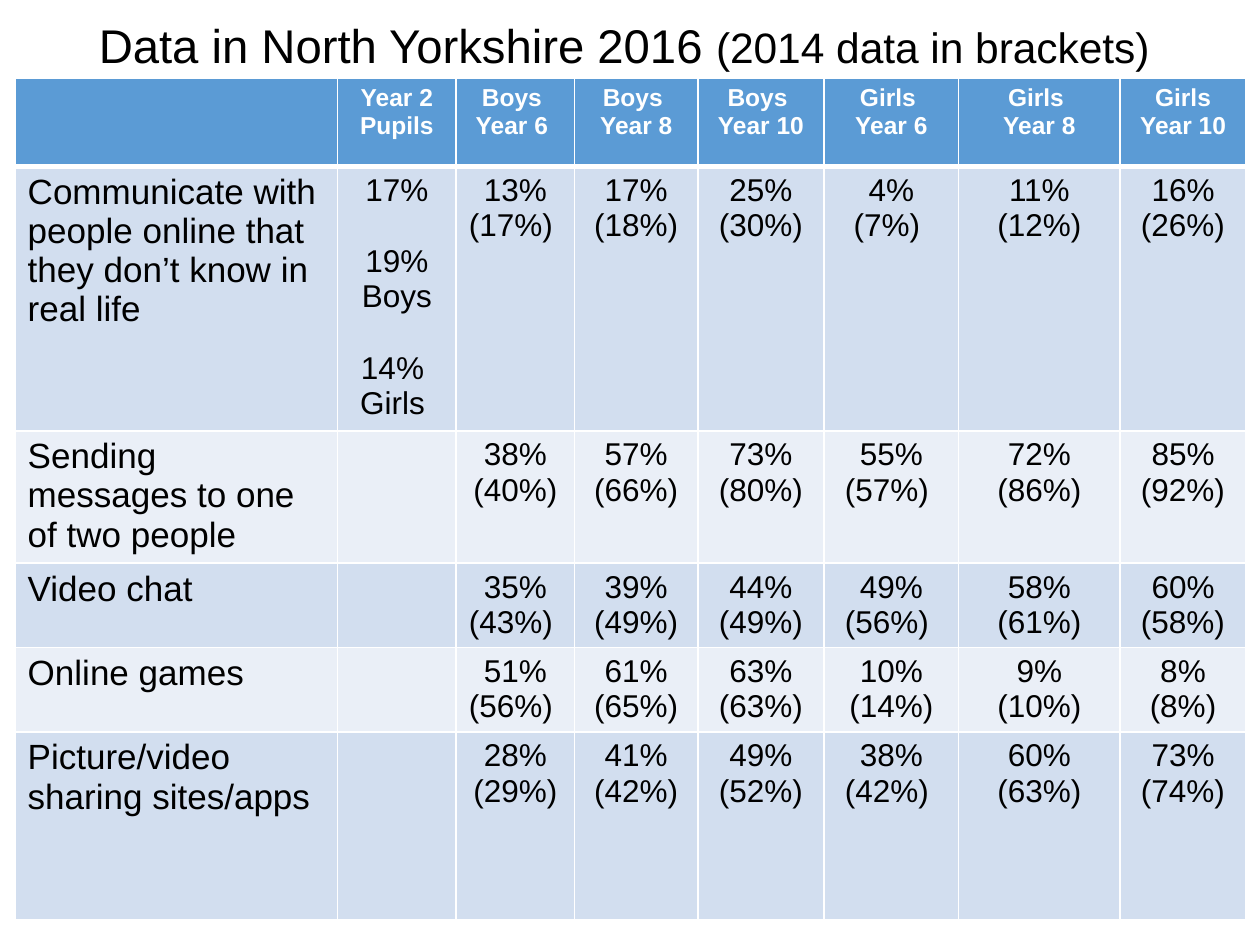
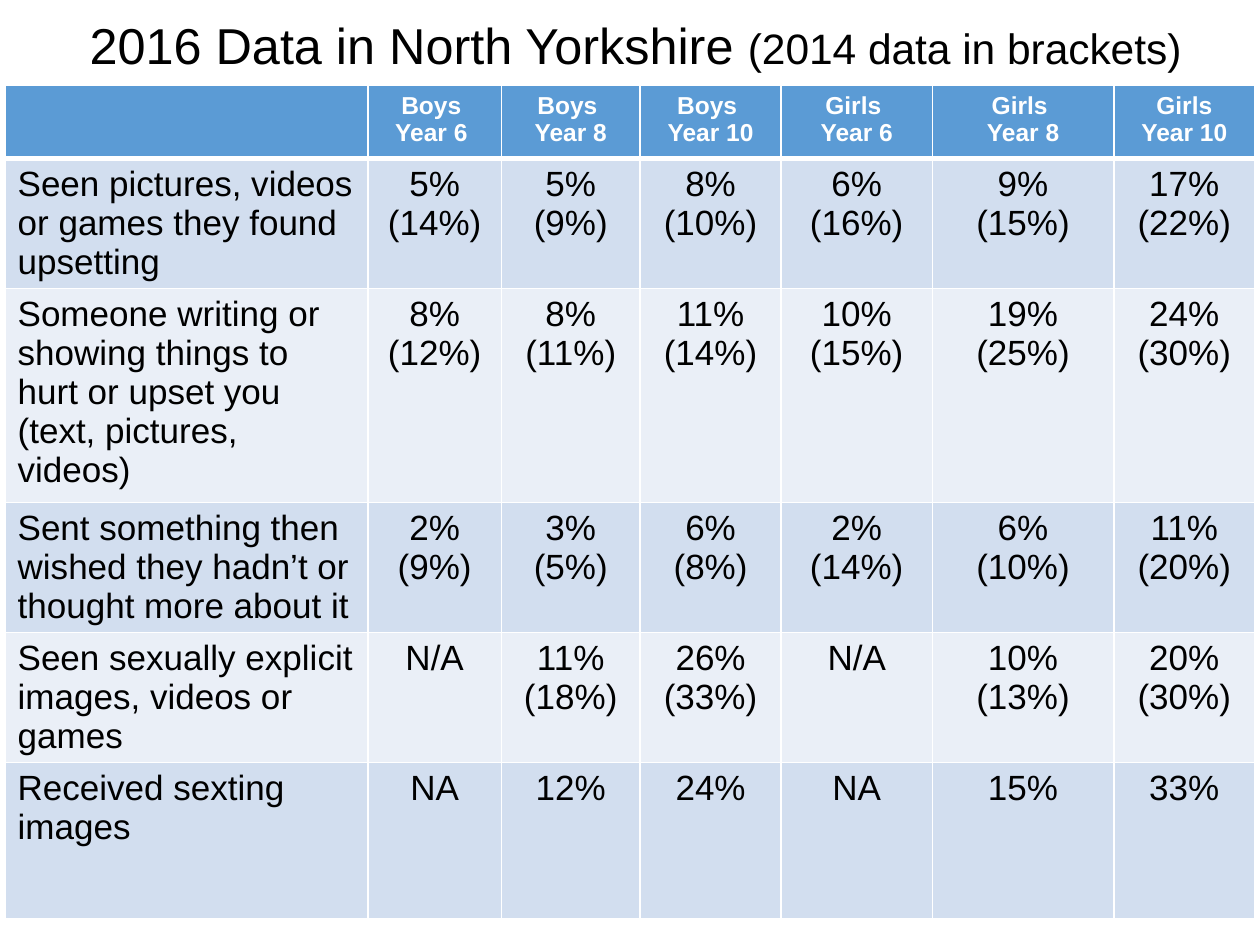
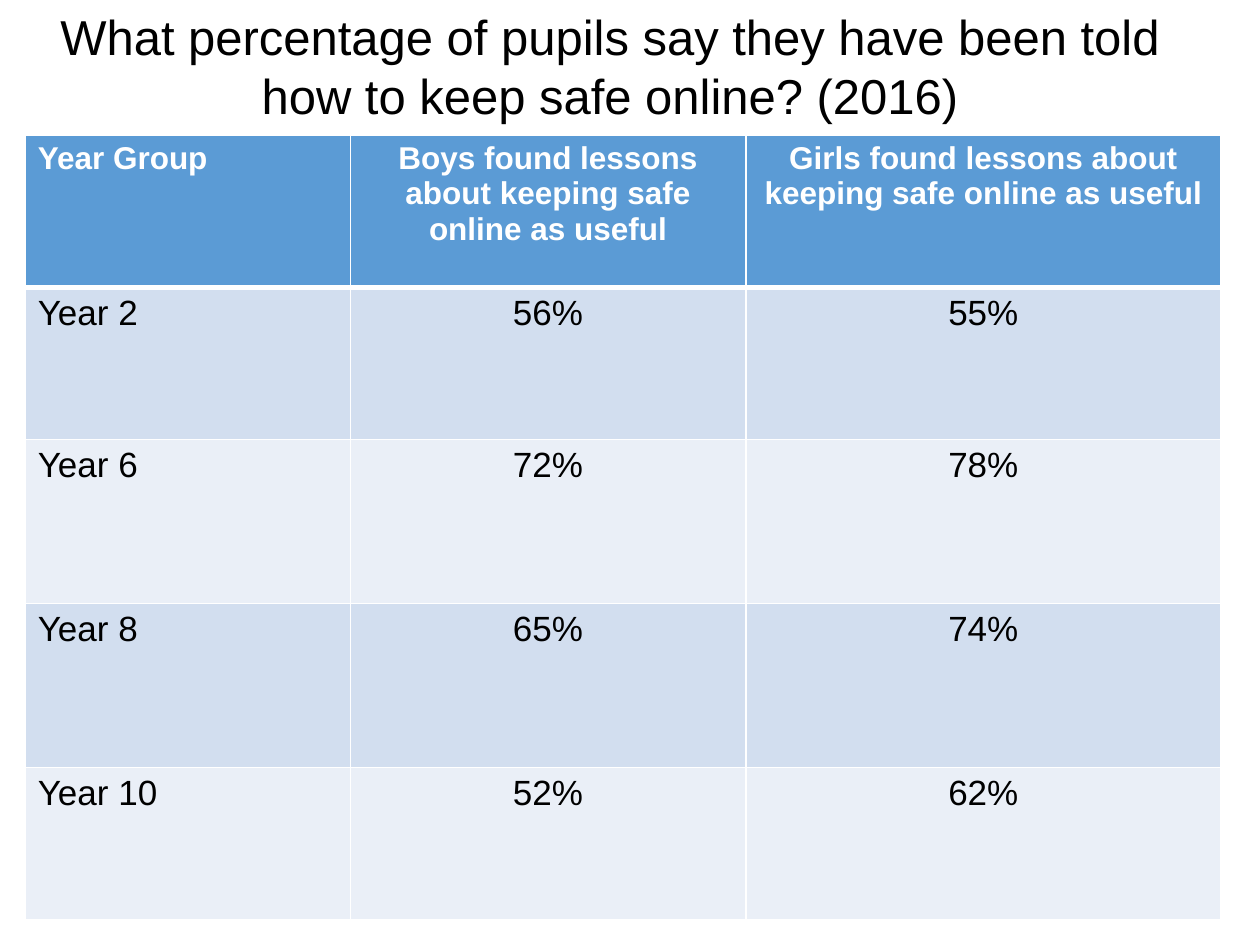
"""Build three slides of survey tables on pupils' online safety in North Yorkshire."""
import lxml.etree
import pptx
import pptx.dml.color
import pptx.enum.text
import pptx.oxml.ns
import pptx.util

Inches = pptx.util.Inches
Pt = pptx.util.Pt
ALIGN = pptx.enum.text.PP_ALIGN
ANCHOR = pptx.enum.text.MSO_ANCHOR

COLORS = {
    "text": "000000",
    "header": "5B9BD5",
    "header_text": "FFFFFF",
    "band_dark": "D2DEEF",
    "band_light": "EAEFF7",
    "border": "FFFFFF",
}
FONT = "Arial"
BRACKET_NOTE = ("(2014 data in brackets)", 24.3)
GENDER_HEADERS = [
    "Boys \nYear 6 ", "Boys \nYear 8", "Boys \nYear 10",
    "Girls \nYear 6", "Girls \nYear 8", "Girls\nYear 10",
]

SLIDES = [
    {
        "title": [("Data in North Yorkshire 2016 ", 27), BRACKET_NOTE],
        "title_box": (0.35, 0, 9.21, 0.76),
        "title_format": {"line_spacing": 0.9},
        "title_anchor": ANCHOR.MIDDLE,
        "table_at": (0.12, 0.62),
        "columns": [2.56, 0.94, 0.94, 0.98, 1, 1.07, 1.28, 1],
        "heights": [0.7, 2.1, 1.05, 0.67, 0.67, 1.49],
        "sizes": {"header": 14, "label": 20, "value": 18},
        "rows": [
            ["", "Year 2\nPupils"] + GENDER_HEADERS,
            ["Communicate with people online that they don’t know in real life",
             "17%\n19% Boys\n14% \nGirls ", "13%\n(17%) ", "17%\n(18%)",
             "25%\n(30%)", "4%\n(7%) ", "11%\n(12%)", "16%\n(26%)"],
            ["Sending messages to one of two people", "", "38%\n(40%)", "57%\n(66%)",
             "73%\n(80%)", "55%\n(57%) ", "72%\n(86%)", "85%\n(92%)"],
            ["Video chat", "", "35%\n(43%) ", "39%\n(49%)",
             "44%\n(49%)", "49%\n(56%) ", "58%\n(61%)", "60%\n(58%)"],
            ["Online games", "", "51%\n(56%) ", "61%\n(65%)",
             "63%\n(63%)", "10%\n(14%)", "9%\n(10%)", "8%\n(8%)"],
            ["Picture/video sharing sites/apps", "", "28%\n(29%)", "41%\n(42%)",
             "49%\n(52%)", "38%\n(42%) ", "60%\n(63%)", "73%\n(74%)"],
        ],
    },
    {
        "title": [("2016 Data in North Yorkshire ", 28.8), BRACKET_NOTE],
        "title_box": (0.28, 0, 9.53, 0.76),
        "title_format": {"line_spacing": 0.9},
        "title_anchor": ANCHOR.MIDDLE,
        "table_at": (0.04, 0.68),
        "columns": [2.88, 1.06, 1.1, 1.12, 1.2, 1.44, 1.12],
        "heights": [0.58, 1.03, 1.7, 1.03, 1.03, 1.24],
        "sizes": {"header": 14, "label": 20, "value": 20},
        "rows": [
            [""] + GENDER_HEADERS,
            ["Seen pictures, videos or games they found upsetting", "5%\n(14%)",
             "5%\n(9%)", "8%\n(10%)", "6%\n(16%)", "9%\n(15%)", "17%\n(22%)"],
            ["Someone writing or showing things to hurt or upset you (text, pictures, videos)",
             "8%\n(12%)", "8%\n(11%)", "11%\n(14%)", "10%\n(15%)", "19%\n(25%)", "24%\n(30%)"],
            ["Sent something then wished they hadn’t or thought more about it", "2%\n(9%)",
             "3%\n(5%)", "6%\n(8%)", "2%\n(14%)", "6%\n(10%)", "11%\n(20%)"],
            ["Seen sexually explicit images, videos or games", "N/A",
             "11%\n(18%)", "26%\n(33%)", "N/A", "10%\n(13%)", "20%\n(30%)"],
            ["Received sexting images", "NA", "12%", "24%", "NA", "15%", "33%"],
        ],
    },
    {
        "title": [("What percentage of pupils say they have been told "
                   "how to keep safe online? (2016)", 28)],
        "title_box": (0.35, 0, 8.98, 1.15),
        "title_format": {"line_spacing": 1.0},
        "title_anchor": ANCHOR.TOP,
        "table_at": (0.2, 1.07),
        "columns": [2.58, 3.14, 3.77],
        "heights": [1.21, 1.21, 1.3, 1.3, 1.21],
        "sizes": {"header": 18, "label": 20, "value": 20},
        "rows": [
            ["Year Group", "Boys found lessons about keeping safe online as useful",
             "Girls found lessons about keeping safe online as useful"],
            ["Year 2", "56%", "55%"],
            ["Year 6", "72%", "78%"],
            ["Year 8", "65%", "74%"],
            ["Year 10", "52%", "62%"],
        ],
    },
]


def format_font(font, color, size, bold=False):
    for name, value in {"name": FONT, "size": Pt(size), "bold": bold}.items():
        setattr(font, name, value)
    font.color.rgb = pptx.dml.color.RGBColor.from_string(COLORS[color])


def format_cell(cell, fill, widths):
    properties = cell._tc.get_or_add_tcPr()
    for side, width in widths.items():
        line = lxml.etree.SubElement(
            properties, pptx.oxml.ns.qn("a:ln" + side), w=str(Pt(width)))
        solid = lxml.etree.SubElement(line, pptx.oxml.ns.qn("a:solidFill"))
        lxml.etree.SubElement(solid, pptx.oxml.ns.qn("a:srgbClr"), val=COLORS["border"])
    cell.fill.solid()
    cell.fill.fore_color.rgb = pptx.dml.color.RGBColor.from_string(COLORS[fill])


presentation = pptx.Presentation()
presentation.slide_width = Inches(10)
presentation.slide_height = Inches(7.5)

for content in SLIDES:
    slide = presentation.slides.add_slide(presentation.slide_layouts[5])

    title = slide.shapes.title
    for name, value in zip(("left", "top", "width", "height"), content["title_box"]):
        setattr(title, name, Inches(value))
    frame_format = {
        "word_wrap": True,
        "auto_size": pptx.enum.text.MSO_AUTO_SIZE.NONE,
        "vertical_anchor": content["title_anchor"],
    }
    for name, value in frame_format.items():
        setattr(title.text_frame, name, value)
    paragraph = title.text_frame.paragraphs[0]
    for name, value in {"alignment": ALIGN.CENTER, **content["title_format"]}.items():
        setattr(paragraph, name, value)
    for text, size in content["title"]:
        run = paragraph.add_run()
        run.text = text
        format_font(run.font, "text", size)

    rows, columns, heights = content["rows"], content["columns"], content["heights"]
    left, top = content["table_at"]
    table = slide.shapes.add_table(
        len(rows), len(columns), Inches(left), Inches(top),
        Inches(sum(columns)), Inches(sum(heights))).table
    for column, width in zip(table.columns, columns):
        column.width = Inches(width)
    for row, height in zip(table.rows, heights):
        row.height = Inches(height)

    for row_index, texts in enumerate(rows):
        is_header = row_index == 0
        fill = "header" if is_header else ("band_light", "band_dark")[row_index % 2]
        widths = {"L": 1, "R": 1, "T": 3 if row_index == 1 else 1, "B": 3 if is_header else 1}
        for column_index, text in enumerate(texts):
            cell = table.cell(row_index, column_index)
            format_cell(cell, fill, widths)
            if not text:
                continue
            kind = "header" if is_header else "value" if column_index else "label"
            cell.text_frame.text = text
            for paragraph in cell.text_frame.paragraphs:
                paragraph.alignment = ALIGN.CENTER if column_index else ALIGN.LEFT
                for run in paragraph.runs:
                    format_font(run.font, "header_text" if is_header else "text",
                                content["sizes"][kind], is_header)
                if paragraph.text in ("19% Boys", "14% "):
                    paragraph.space_before = Pt(20.7)

presentation.save("out.pptx")
